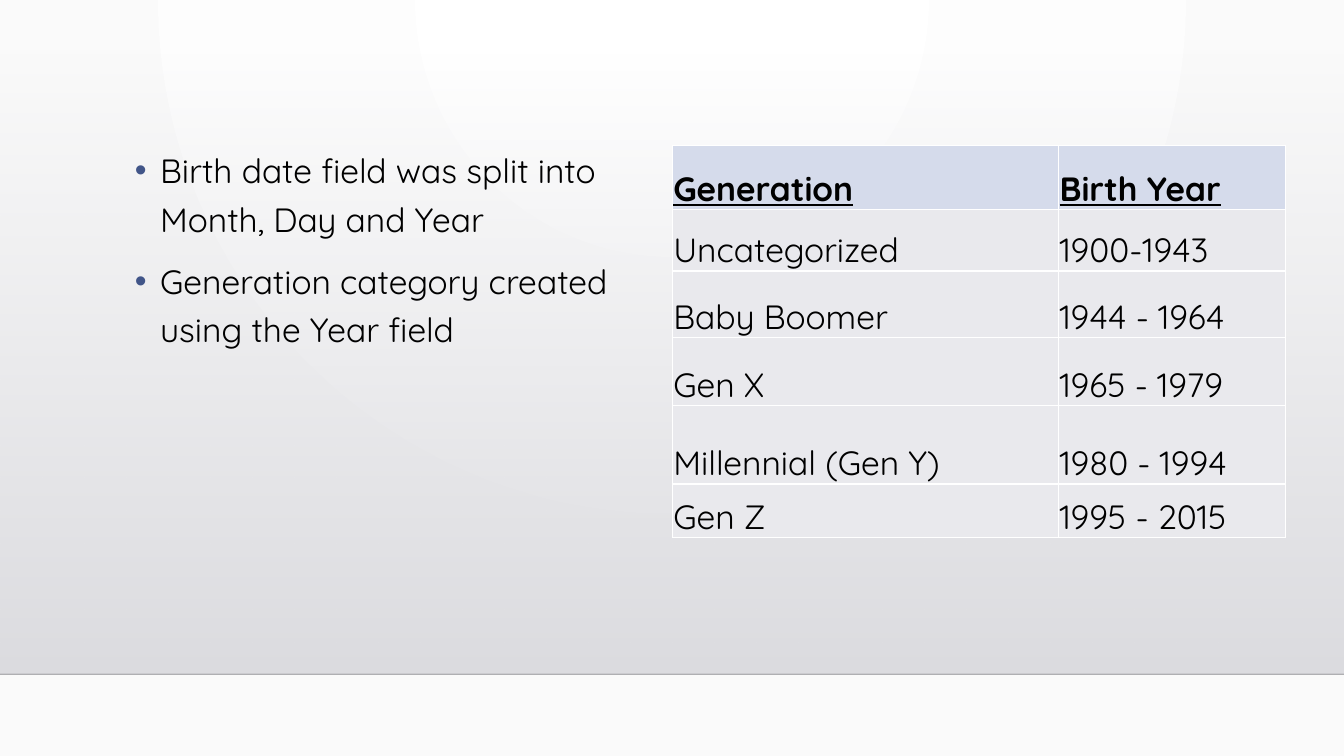
"""Build a slide that pairs two notes on birth dates with a table of generations."""
from pptx import Presentation
from pptx.dml.color import RGBColor
from pptx.enum.shapes import MSO_CONNECTOR, MSO_SHAPE
from pptx.enum.text import MSO_ANCHOR
from pptx.oxml import parse_xml
from pptx.oxml.ns import nsdecls, qn
from pptx.util import Pt

LINE, RECT = MSO_CONNECTOR.STRAIGHT, MSO_SHAPE.RECTANGLE
BOTTOM = MSO_ANCHOR.BOTTOM

NOTES = [
    "Birth date field was split into Month, Day and Year",
    "Generation category created using the Year field",
]
ROWS = [
    ("Generation", "Birth Year"),
    ("Uncategorized", "1900-1943"),
    ("Baby Boomer", "1944 - 1964"),
    ("Gen X", "1965 - 1979"),
    ("Millennial (Gen Y)", "1980 - 1994"),
    ("Gen Z", "1995 - 2015"),
]
WIDE, HIGH, FLOOR = 960, 540, 481.6
WIDTHS = [275.9, 162.3]
HEIGHTS = [46, 43.7, 47.8, 48.4, 56, 38.2]
BODY = {"name": "Quicksand", "size": Pt(24), "bold": False, "underline": False}
HEAD = {**BODY, "bold": True, "underline": True}
INSETS = {"margin_left": Pt(0.75), "margin_right": Pt(0.75),
          "margin_top": Pt(0.75), "margin_bottom": 0, "vertical_anchor": BOTTOM}


def tint(hue):
    """Turn a hex string into a colour."""
    return RGBColor.from_string(hue)


def put(item, vals):
    """Set each named value on an item."""
    for key, val in vals.items():
        setattr(item, key, val)


def node(xml):
    """Make a drawing element from a tag with its content."""
    name, rest = xml.split(" ", 1)
    return parse_xml(f"<a:{name} {nsdecls('a')} {rest}")


def ink(font, style):
    """Style a font in black."""
    put(font, style)
    font.color.rgb = tint("000000")


def blend(fill, hues):
    """Give a fill two gradient stops."""
    fill.gradient()
    for stop, hue, spot in zip(fill.gradient_stops, hues, (0, 1)):
        stop.color.rgb = tint(hue)
        stop.position = spot


def fade(root, shares):
    """Set the opacity of each colour under an element."""
    for hue, share in zip(root.iter(qn("a:srgbClr")), shares):
        hue.append(node(f'alpha val="{share * 1000}"/>'))


def backdrop(slide):
    """Lay the round glow, the shaded wall and the floor line."""
    blend(slide.background.fill, ("FFFFFF", "FAFAFA"))
    grad = next(slide.element.iter(qn("a:gradFill")))
    grad.remove(grad.find(qn("a:lin")))
    grad.append(node('path path="circle"><a:fillToRect l="43000" r="43000" '
                     'b="100000"/></a:path>'))

    top = 36.7
    wall = slide.shapes.add_shape(RECT, 0, Pt(top), Pt(WIDE), Pt(FLOOR - top))
    wall.shadow.inherit = False
    wall.line.fill.background()
    blend(wall.fill, ("DCDCE0", "DEDEE2"))
    wall.fill.gradient_angle = 270
    fade(wall.element.spPr, (0, 100))

    edge = slide.shapes.add_connector(LINE, 0, Pt(FLOOR), Pt(WIDE), Pt(FLOOR))
    edge.line.width = Pt(1)
    edge.line.color.rgb = tint("000001")
    props = edge.element.spPr
    fade(props, (20,))
    props.append(node("effectLst />"))


def notes(slide):
    """Write the bulleted notes."""
    box = slide.shapes.add_textbox(Pt(89.3), Pt(97.9), Pt(391), Pt(332.6))
    frame = box.text_frame
    frame.word_wrap = True
    for num, text in enumerate(NOTES):
        para = frame.add_paragraph() if num else frame.paragraphs[0]
        para.text = text
        put(para, {"line_spacing": 1.2, "space_before": Pt(10 if num else 0)})
        props = para._p.get_or_add_pPr()
        props.set("marL", str(Pt(18)))
        props.set("indent", str(-Pt(18)))
        props.append(node('buClr ><a:srgbClr val="415588"/></a:buClr>'))
        props.append(node('buFont typeface="Arial"/>'))
        props.append(node('buChar char="•"/>'))
        ink(para.runs[0].font, BODY)


def table(slide):
    """Draw the table of generations."""
    grid = slide.shapes.add_table(len(ROWS), len(WIDTHS), Pt(480.2), Pt(103.9),
                                  Pt(sum(WIDTHS)), Pt(sum(HEIGHTS))).table
    for col, width in zip(grid.columns, WIDTHS):
        col.width = Pt(width)
    for num, (row, height, texts) in enumerate(zip(grid.rows, HEIGHTS, ROWS)):
        row.height = Pt(height)
        for cell, text in zip(row.cells, texts):
            cell.text = text
            put(cell, INSETS)
            ink(cell.text_frame.paragraphs[0].runs[0].font, BODY if num else HEAD)
            props = cell._tc.get_or_add_tcPr()
            for side in "LRTB":
                props.append(node(f'ln{side} w="{Pt(1)}"><a:solidFill><a:srgbClr '
                                  f'val="FFFFFF"/></a:solidFill></a:ln{side}>'))
            cell.fill.solid()
            cell.fill.fore_color.rgb = tint("E9E9ED" if num else "D5DBEB")


def main():
    """Build and save the slide."""
    deck = Presentation()
    put(deck, {"slide_width": Pt(WIDE), "slide_height": Pt(HIGH)})
    slide = deck.slides.add_slide(deck.slide_layouts[6])
    backdrop(slide)
    notes(slide)
    table(slide)
    deck.save("out.pptx")


if __name__ == "__main__":
    main()
